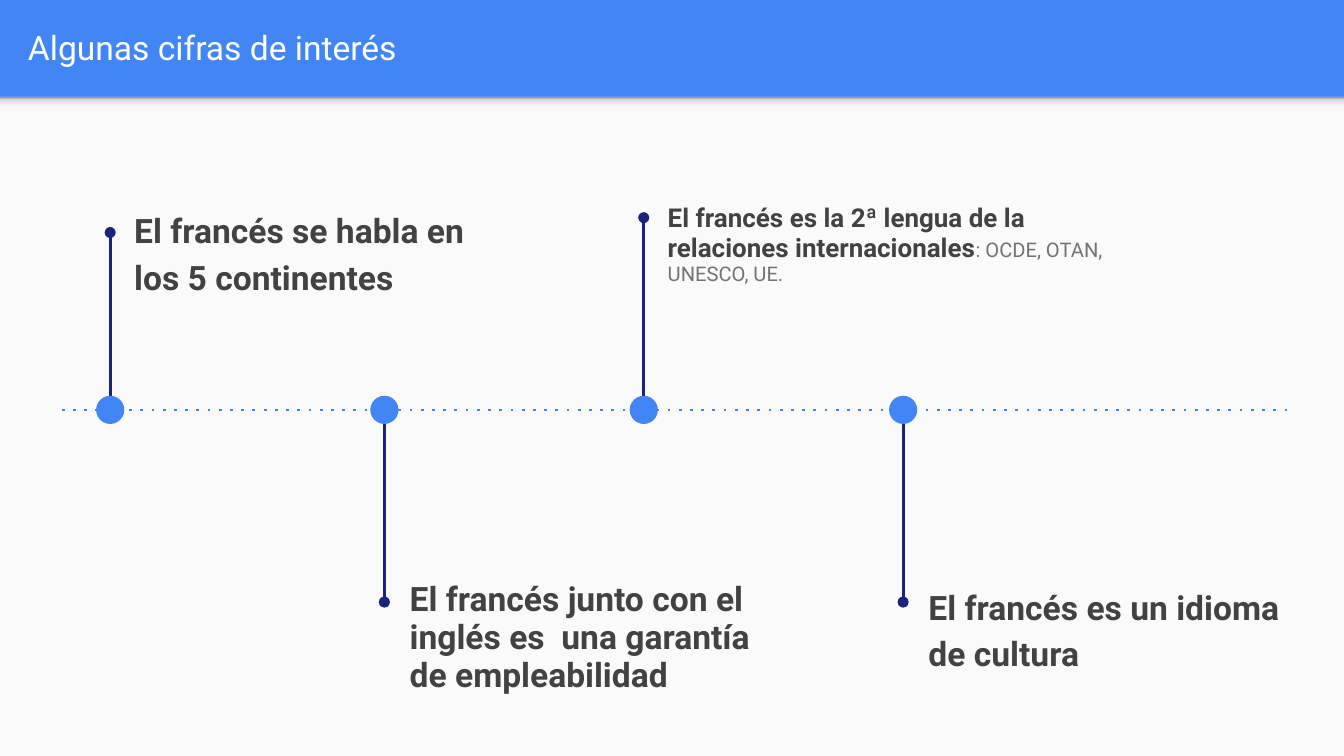
"""Build a slide with a timeline of four facts about the French language."""
from dataclasses import dataclass

from lxml import etree
from pptx import Presentation
from pptx import util as u
from pptx.dml.color import RGBColor
from pptx.enum import shapes, text
from pptx.oxml.ns import qn
from pptx.shapes.autoshape import Shape
from pptx.shapes.connector import Connector
from pptx.slide import Slide


@dataclass(frozen=True)
class Theme:
    font: str = "Roboto"
    blue: str = "4285F4"
    navy: str = "1A237E"
    panel: str = "FAFAFA"
    white: str = "FFFFFF"
    dark: str = "424242"
    grey: str = "737373"
    shadow: tuple = ((0, "F9F9F9"), (36, "F9F9F9"), (80, "DEDEDE"), (100, "999999"))
    heading: float = 18
    compact: float = 13.9
    detail: float = 10.8
    line: float = 1.5


THEME = Theme()
WIDTH = 10
HEIGHT = WIDTH * 9 / 16
HEADER = 0.72
AXIS_Y = 3.05
DOT = 0.21
BOX_HEIGHT = 1.06
UPPER, LOWER = 1.42, 4.22


@dataclass(frozen=True)
class Fact:
    x: float
    pin_y: float
    box: tuple[float, float, float, float]
    wording: str
    detail: str = ""
    size: float = THEME.heading
    spacing: float = 1.15
    after: float = 0


FACTS = (
    Fact(0.82, 1.73, (0.9, UPPER, 2.86, BOX_HEIGHT),
         "El francés se habla en los 5 continentes"),
    Fact(2.86, 4.48, (2.95, LOWER, 2.91, BOX_HEIGHT),
         "El francés junto con el inglés es  una garantía de empleabilidad",
         spacing=0.95),
    Fact(4.79, 1.62, (4.87, UPPER, 3.8, BOX_HEIGHT),
         "El francés es la 2ª lengua de la relaciones internacionales",
         detail=": OCDE, OTAN, UNESCO, UE.", size=THEME.compact, spacing=0.95),
    Fact(6.72, 4.48, (6.81, LOWER, 2.91, BOX_HEIGHT),
         "El francés es un idioma de cultura", after=12),
)


def add_filled(slide: Slide, kind: shapes.MSO_SHAPE, x: float, y: float,
               width: float, height: float, color: str) -> Shape:
    shape = slide.shapes.add_shape(
        kind, u.Inches(x), u.Inches(y), u.Inches(width), u.Inches(height))
    shape.shadow.inherit = False
    shape.fill.solid()
    shape.fill.fore_color.rgb = RGBColor.from_string(color)
    shape.line.fill.background()
    return shape


def add_header_shadow(slide: Slide) -> None:
    band = add_filled(slide, shapes.MSO_SHAPE.RECTANGLE,
                      0, HEADER, WIDTH, 0.12, THEME.panel)
    band.fill.gradient()
    band.fill.gradient_angle = 90
    stops = next(band._element.spPr.iter(qn("a:gsLst")))
    for stop in list(stops):
        stops.remove(stop)
    for percent, color in THEME.shadow:
        stop = etree.SubElement(stops, qn("a:gs"), pos=str(percent * 1000))
        etree.SubElement(stop, qn("a:srgbClr"), val=color)


def add_line(slide: Slide, start: tuple[float, float], end: tuple[float, float],
             color: str, dash: str = "", tail: str = "") -> Connector:
    line = slide.shapes.add_connector(
        shapes.MSO_CONNECTOR.STRAIGHT, *(u.Inches(value) for value in (*start, *end)))
    line.line.color.rgb = RGBColor.from_string(color)
    line.line.width = u.Pt(THEME.line)
    properties = line._element.spPr
    stroke = properties.find(qn("a:ln"))
    if dash:
        etree.SubElement(stroke, qn("a:prstDash"), val=dash)
    if tail:
        etree.SubElement(stroke, qn("a:tailEnd"), type=tail)
    etree.SubElement(properties, qn("a:effectLst"))
    return line


def add_text(slide: Slide, box: tuple[float, float, float, float], wording: str, *,
             size: float, color: str, bold: bool = False, detail: str = "",
             spacing: float = 1.0, after: float = 0,
             anchor: text.MSO_ANCHOR = text.MSO_ANCHOR.TOP) -> None:
    frame = slide.shapes.add_textbox(*(u.Inches(value) for value in box)).text_frame
    frame.word_wrap = True
    frame.vertical_anchor = anchor
    frame.margin_left = frame.margin_right = u.Inches(0.1)
    frame.margin_top = frame.margin_bottom = u.Inches(0.1)
    paragraph = frame.paragraphs[0]
    paragraph.line_spacing = spacing
    paragraph.space_after = u.Pt(after)
    pieces = [(wording, size, color, bold)]
    if detail:
        pieces.append((detail, THEME.detail, THEME.grey, False))
    for words, points, tint, weight in pieces:
        run = paragraph.add_run()
        run.text = words
        run.font.name = THEME.font
        run.font.size = u.Pt(points)
        run.font.bold = weight
        run.font.color.rgb = RGBColor.from_string(tint)


def add_fact(slide: Slide, fact: Fact) -> None:
    direction = 1 if fact.pin_y > AXIS_Y else -1
    add_line(slide, (fact.x, AXIS_Y + direction * DOT / 2), (fact.x, fact.pin_y),
             THEME.navy, tail="oval")
    add_filled(slide, shapes.MSO_SHAPE.OVAL,
               fact.x - DOT / 2, AXIS_Y - DOT / 2, DOT, DOT, THEME.blue)
    add_text(slide, fact.box, fact.wording, size=fact.size, color=THEME.dark, bold=True,
             detail=fact.detail, spacing=fact.spacing, after=fact.after)


def main() -> None:
    deck = Presentation()
    deck.slide_width, deck.slide_height = u.Inches(WIDTH), u.Inches(HEIGHT)
    slide = deck.slides.add_slide(deck.slide_layouts[6])
    slide.background.fill.solid()
    slide.background.fill.fore_color.rgb = RGBColor.from_string(THEME.blue)
    add_filled(slide, shapes.MSO_SHAPE.RECTANGLE,
               0, HEADER, WIDTH, HEIGHT - HEADER, THEME.panel)
    add_header_shadow(slide)
    add_text(slide, (0.11, 0.02, 9.65, 0.66), "Algunas cifras de interés",
             size=THEME.heading, color=THEME.white, anchor=text.MSO_ANCHOR.MIDDLE)
    add_line(slide, (0.46, AXIS_Y), (9.58, AXIS_Y), THEME.blue, dash="dot")
    for fact in FACTS:
        add_fact(slide, fact)
    deck.save("out.pptx")


if __name__ == "__main__":
    main()
